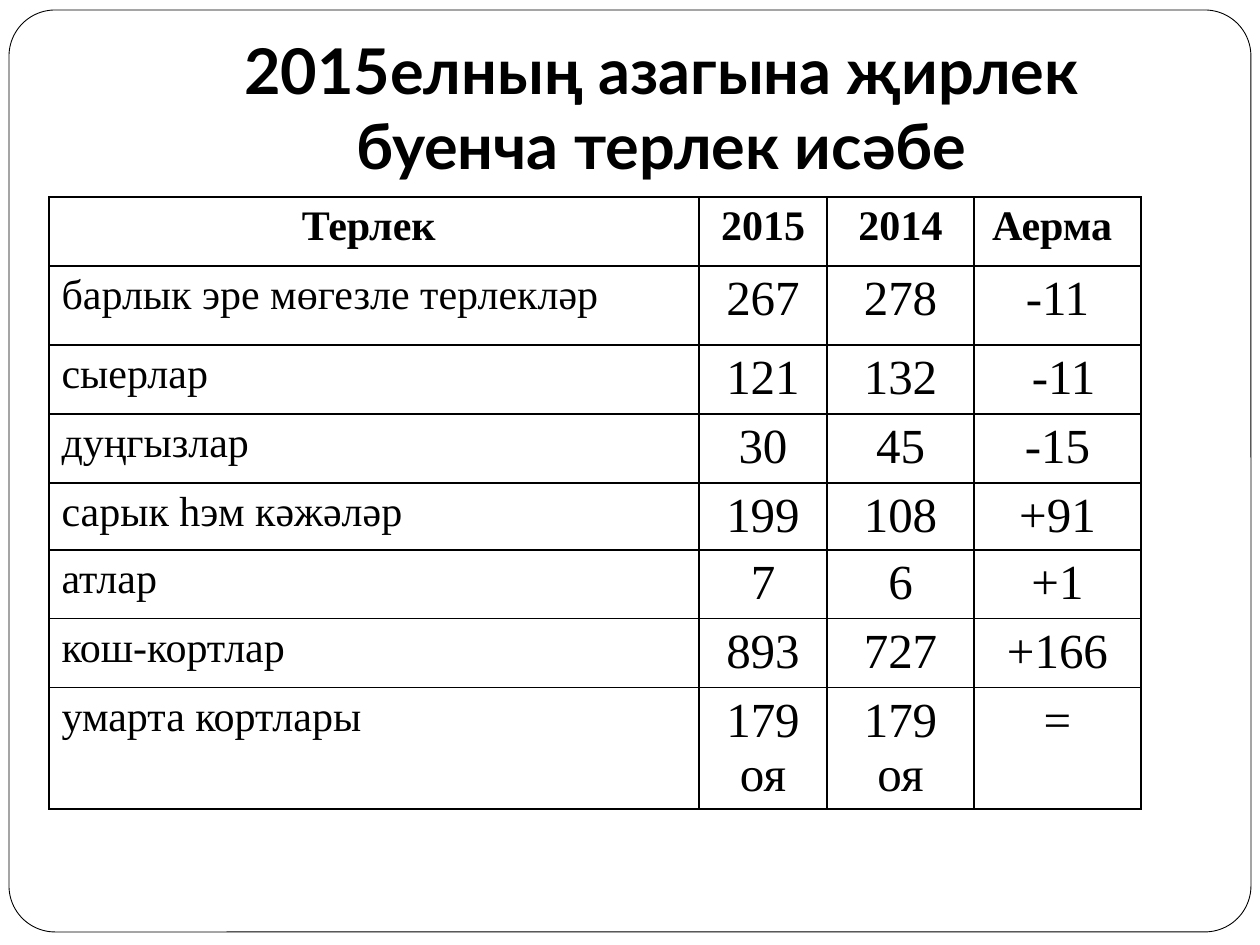
from lxml import etree
from pptx import Presentation
from pptx import util as u
from pptx.dml.color import RGBColor
from pptx.enum import shapes, text
from pptx.oxml.ns import qn

EMU_PER_PX = 914400 / 126
BLACK, WHITE = "000000", "FFFFFF"

HEADER = ["Терлек ", "2015", "2014", "Аерма "]
LIVESTOCK = [
    ["барлык эре мөгезле терлекләр", "267", "278", "-11"],
    ["сыерлар", "121", "132", " -11"],
    ["дуңгызлар", "30", "45", "-15"],
    ["сарык һэм кәжәләр", "199", "108", "+91"],
    ["атлар", "7", "6", "+1"],
    ["кош-кортлар", "893", "727", "+166"],
    ["умарта кортлары", "179 оя", "179 оя", "="],
]
COLUMN_WIDTHS = [650, 128, 147, 167]
ROW_HEIGHTS = [69, 79, 69, 69, 67, 69, 69, 119]


def px(length):
    return u.Emu(round(length * EMU_PER_PX))


def color(value):
    return RGBColor.from_string(value)


class SlideBuilder:
    title_font = "Lato"
    table_font = "Times New Roman"

    def __init__(self, slide):
        self.slide = slide

    def add_run(self, paragraph, content, size, font, bold=False):
        run = paragraph.add_run()
        run.text = content
        run.font.size = u.Pt(size)
        run.font.name = font
        run.font.bold = bold
        run.font.color.rgb = color(BLACK)

    def frame(self, left, top, width, height):
        shape = self.slide.shapes.add_shape(
            shapes.MSO_SHAPE.ROUNDED_RECTANGLE, px(left), px(top), px(width), px(height))
        shape.adjustments[0] = 0.05
        shape.shadow.inherit = False
        shape.fill.solid()
        shape.fill.fore_color.rgb = color(WHITE)
        shape.line.color.rgb = color(BLACK)
        shape.line.width = u.Pt(0.5)
        # Send behind the title placeholder
        self.slide.shapes._spTree.insert(2, shape._element)

    def title(self, content, left, top, width, height):
        shape = self.slide.shapes.title
        shape.left, shape.top, shape.width, shape.height = map(px, (left, top, width, height))
        frame = shape.text_frame
        frame.word_wrap = True
        frame.auto_size = text.MSO_AUTO_SIZE.NONE
        frame.vertical_anchor = text.MSO_ANCHOR.BOTTOM
        frame.margin_left = frame.margin_right = frame.margin_bottom = u.Inches(0.1)
        frame.margin_top = u.Inches(0.05)
        paragraph = frame.paragraphs[0]
        paragraph.alignment = text.PP_ALIGN.CENTER
        self.add_run(paragraph, content, 36, self.title_font, bold=True)

    def cell_borders(self, cell):
        properties = cell._tc.get_or_add_tcPr()
        for index, side in enumerate(("a:lnL", "a:lnR", "a:lnT", "a:lnB")):
            line = etree.Element(qn(side), w=str(u.Pt(1)))
            fill = etree.SubElement(line, qn("a:solidFill"))
            etree.SubElement(fill, qn("a:srgbClr"), val=BLACK)
            properties.insert(index, line)

    def table(self, rows, left, top, widths, heights):
        table = self.slide.shapes.add_table(
            len(rows), len(widths), px(left), px(top), px(sum(widths)), px(sum(heights))).table
        table.first_row = table.horz_banding = False
        for column, width in zip(table.columns, widths):
            column.width = px(width)
        for row, height in zip(table.rows, heights):
            row.height = px(height)
        for row_index, values in enumerate(rows):
            for column_index, value in enumerate(values):
                cell = table.cell(row_index, column_index)
                cell.fill.background()
                self.cell_borders(cell)
                is_header, is_name = row_index == 0, column_index == 0
                paragraph = cell.text_frame.paragraphs[0]
                paragraph.alignment = (text.PP_ALIGN.LEFT if is_name and not is_header
                                       else text.PP_ALIGN.CENTER)
                self.add_run(paragraph, value, 24 if is_header or is_name else 28,
                             self.table_font, bold=is_header)


def main():
    presentation = Presentation()
    presentation.slide_width, presentation.slide_height = px(1260), px(945)
    builder = SlideBuilder(presentation.slides.add_slide(presentation.slide_layouts[5]))

    # Rounded page frame
    builder.frame(9, 10, 1242, 922)
    # Heading
    builder.title("2015елның азагына җирлек буенча терлек исәбе", 126, 38, 1071, 157)
    # Livestock counts by year
    builder.table([HEADER] + LIVESTOCK, 49, 197, COLUMN_WIDTHS, ROW_HEIGHTS)

    presentation.save("out.pptx")


if __name__ == "__main__":
    main()
